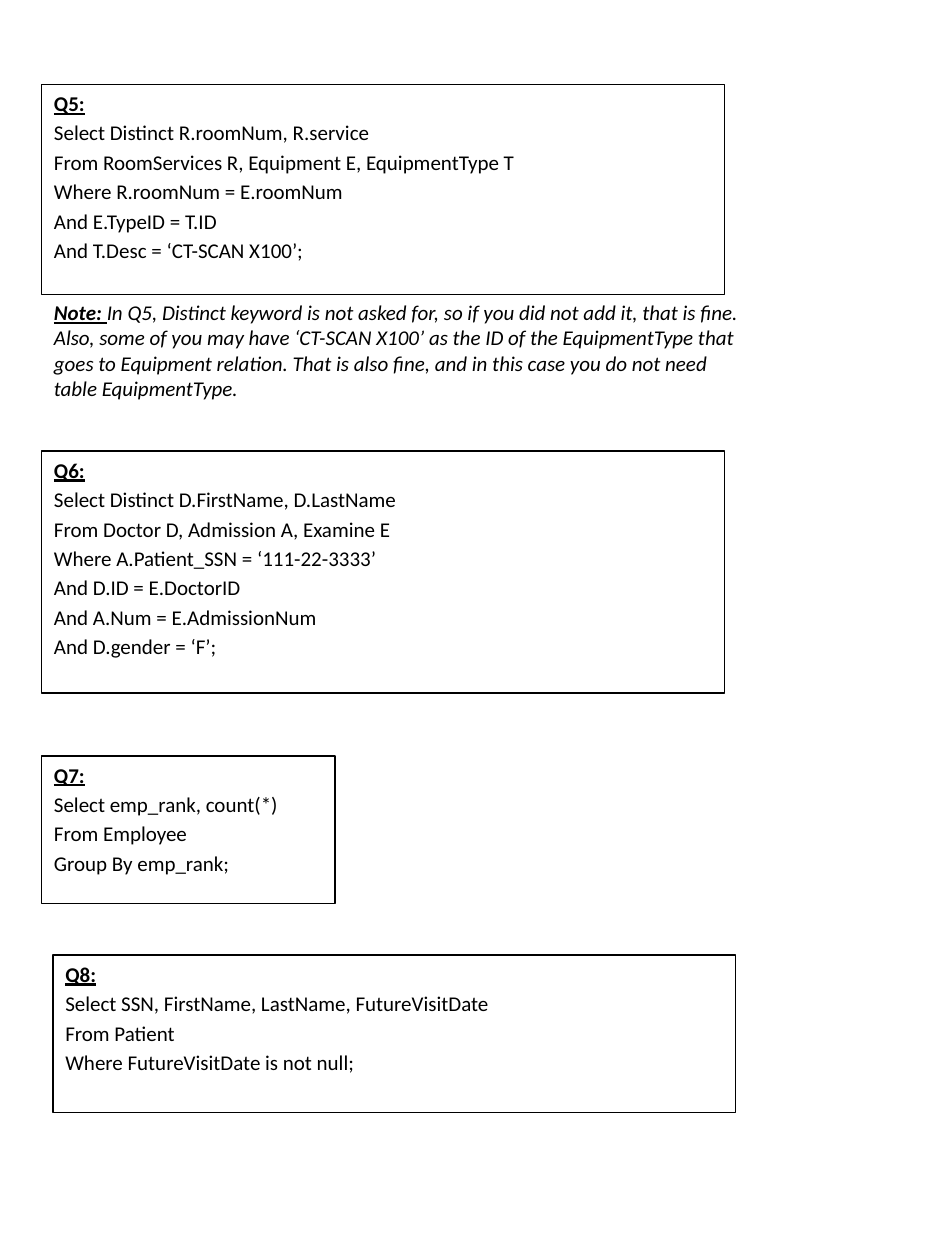
from pptx import Presentation
from pptx.dml.color import RGBColor
from pptx.enum.shapes import MSO_SHAPE as Shape
from pptx.enum.text import MSO_ANCHOR as Anchor, PP_ALIGN as Align
from pptx.util import Inches, Pt

QUERIES = [
    ((0.33, 0.67, 5.42, 1.67), "Q5:", [
        "Select Distinct R.roomNum, R.service",
        "From RoomServices R, Equipment E, EquipmentType T",
        "Where R.roomNum = E.roomNum",
        "And E.TypeID = T.ID",
        "And T.Desc = ‘CT-SCAN X100’;",
    ]),
    ((0.33, 3.58, 5.42, 1.92), "Q6:", [
        "Select Distinct D.FirstName, D.LastName",
        "From Doctor D, Admission A, Examine E",
        "Where A.Patient_SSN = ‘111-22-3333’",
        "And D.ID = E.DoctorID",
        "And A.Num = E.AdmissionNum",
        "And D.gender = ‘F’;",
    ]),
    ((0.33, 6, 2.33, 1.17), "Q7:", [
        "Select emp_rank, count(*)",
        "From Employee",
        "Group By emp_rank;",
    ]),
    ((0.42, 7.58, 5.42, 1.25), "Q8:", [
        "Select SSN, FirstName, LastName, FutureVisitDate",
        "From Patient",
        "Where FutureVisitDate is not null;",
    ]),
]
NOTE = (
    "In Q5, Distinct keyword is not asked for, so if you did not add it, that is fine. "
    "Also, some of you may have ‘CT-SCAN X100’ as the ID of the EquipmentType that "
    "goes to Equipment relation. That is also fine, and in this case you do not need "
    "table EquipmentType."
)


def color(value):
    return RGBColor.from_string(value)


def add_text(para, text, font="Calibri", size=12, ink="000000",
             bold=False, italic=False, underline=False):
    span = para.add_run()
    span.text = text
    span.font.name = font
    span.font.size = Pt(size)
    span.font.color.rgb = color(ink)
    span.font.bold = bold
    span.font.italic = italic
    span.font.underline = underline


class AnswerPage:
    line_color = "000000"
    line_width = 0.75
    space_before = 2.4

    def __init__(self, deck):
        self.page = deck.slides.add_slide(deck.slide_layouts[6])

    def format_para(self, para):
        para.alignment = Align.LEFT
        para.space_before = Pt(self.space_before)
        return para

    def query(self, place, title, lines):
        box = self.page.shapes.add_shape(Shape.RECTANGLE, *map(Inches, place))
        box.shadow.inherit = False
        box.fill.background()
        box.line.color.rgb = color(self.line_color)
        box.line.width = Pt(self.line_width)
        frame = box.text_frame
        frame.word_wrap = True
        frame.vertical_anchor = Anchor.TOP
        add_text(self.format_para(frame.paragraphs[0]), title, bold=True, underline=True)
        for line in lines:
            add_text(self.format_para(frame.add_paragraph()), line)

    def note(self, place, label, text):
        box = self.page.shapes.add_textbox(*map(Inches, place))
        box.text_frame.word_wrap = True
        para = self.format_para(box.text_frame.paragraphs[0])
        add_text(para, label, bold=True, italic=True, underline=True)
        add_text(para, text, italic=True)


def main():
    deck = Presentation()
    deck.slide_width, deck.slide_height = Inches(7.5), Inches(10)
    answers = AnswerPage(deck)
    for place, title, lines in QUERIES:
        answers.query(place, title, lines)
    answers.note((0.33, 2.33, 5.67, 0.83), "Note: ", NOTE)
    deck.save("out.pptx")


if __name__ == "__main__":
    main()
